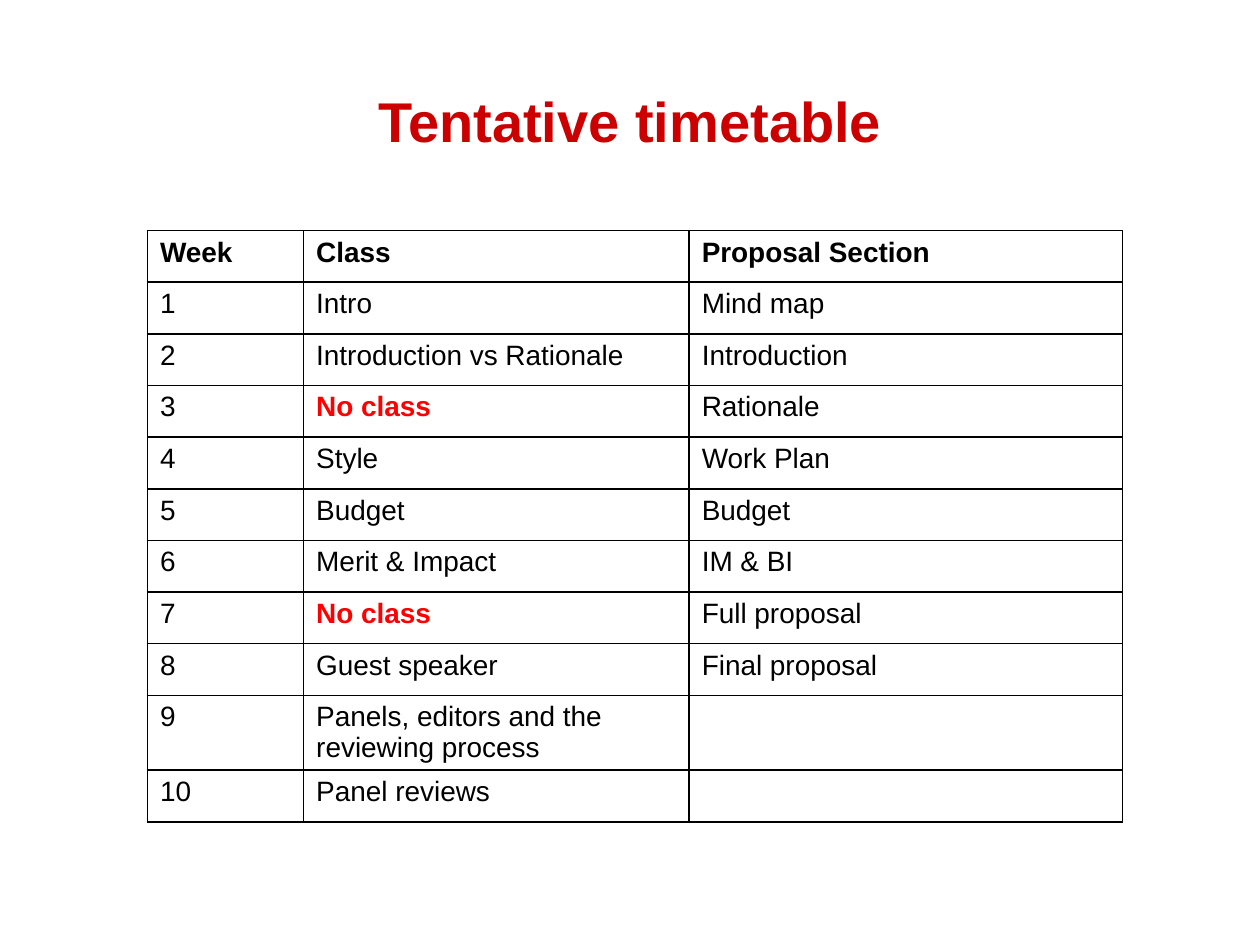
from typing import NamedTuple

from lxml.etree import SubElement
from pptx import Presentation
from pptx.dml.color import RGBColor
from pptx.enum.text import MSO_ANCHOR, PP_ALIGN
from pptx.oxml.ns import qn
from pptx.util import Inches, Pt

FONT = "Arial"
BLACK, WHITE, TITLE_RED, ALERT_RED = "000000", "FFFFFF", "CC0000", "FF0000"
NO_CLASS = "No class"
COLUMN_WIDTHS = (1.24, 3.06, 3.44)
ROW_HEIGHT = 0.41


class Week(NamedTuple):
    number: str
    topic: str
    section: str = ""


HEADER = Week("Week", "Class", "Proposal Section")
WEEKS = [
    Week("1", "Intro", "Mind map"),
    Week("2", "Introduction vs Rationale", "Introduction"),
    Week("3", NO_CLASS, "Rationale"),
    Week("4", "Style", "Work Plan"),
    Week("5", "Budget", "Budget"),
    Week("6", "Merit & Impact", "IM & BI"),
    Week("7", NO_CLASS, "Full proposal"),
    Week("8", "Guest speaker", "Final proposal"),
    Week("9", "Panels, editors and the reviewing process"),
    Week("10", "Panel reviews"),
]


def rgb(value: str) -> RGBColor:
    return RGBColor.from_string(value)


def format_text(para, size: float, color: str, bold: bool) -> None:
    for span in para.runs:
        span.font.name = FONT
        span.font.size = Pt(size)
        span.font.bold = bold
        span.font.color.rgb = rgb(color)


def add_title(page, text: str) -> None:
    title = page.shapes.title
    title.left, title.top = Inches(0.5), Inches(0.33)
    title.width, title.height = Inches(9), Inches(1.25)
    title.text_frame.text = text
    title.text_frame.vertical_anchor = MSO_ANCHOR.MIDDLE
    para = title.text_frame.paragraphs[0]
    para.alignment = PP_ALIGN.CENTER
    format_text(para, 32, TITLE_RED, True)


def style_cell(cell) -> None:
    """Give the cell a white fill and a thin black border on every side."""
    properties = cell._tc.get_or_add_tcPr()
    for side in ("lnL", "lnR", "lnT", "lnB"):
        line = SubElement(properties, qn(f"a:{side}"), w=str(Pt(1)))
        fill = SubElement(line, qn("a:solidFill"))
        SubElement(fill, qn("a:srgbClr"), val=BLACK)
    cell.fill.solid()
    cell.fill.fore_color.rgb = rgb(WHITE)


def add_timetable(page, rows: list[Week]) -> None:
    frame = page.shapes.add_table(
        len(rows), len(COLUMN_WIDTHS), Inches(1.17), Inches(1.83),
        Inches(sum(COLUMN_WIDTHS)), Inches(ROW_HEIGHT * len(rows)))
    table = frame.table
    for column, width in zip(table.columns, COLUMN_WIDTHS):
        column.width = Inches(width)
    for row, week in zip(table.rows, rows):
        row.height = Inches(ROW_HEIGHT)
        for cell, text in zip(row.cells, week):
            style_cell(cell)
            cell.text_frame.text = text
            color = ALERT_RED if text == NO_CLASS else BLACK
            bold = week is HEADER or text == NO_CLASS
            format_text(cell.text_frame.paragraphs[0], 16, color, bold)


def main() -> None:
    deck = Presentation()
    deck.slide_width, deck.slide_height = Inches(10), Inches(7.5)
    page = deck.slides.add_slide(deck.slide_layouts[5])
    add_title(page, "Tentative timetable")
    add_timetable(page, [HEADER, *WEEKS])
    deck.save("out.pptx")


if __name__ == "__main__":
    main()
